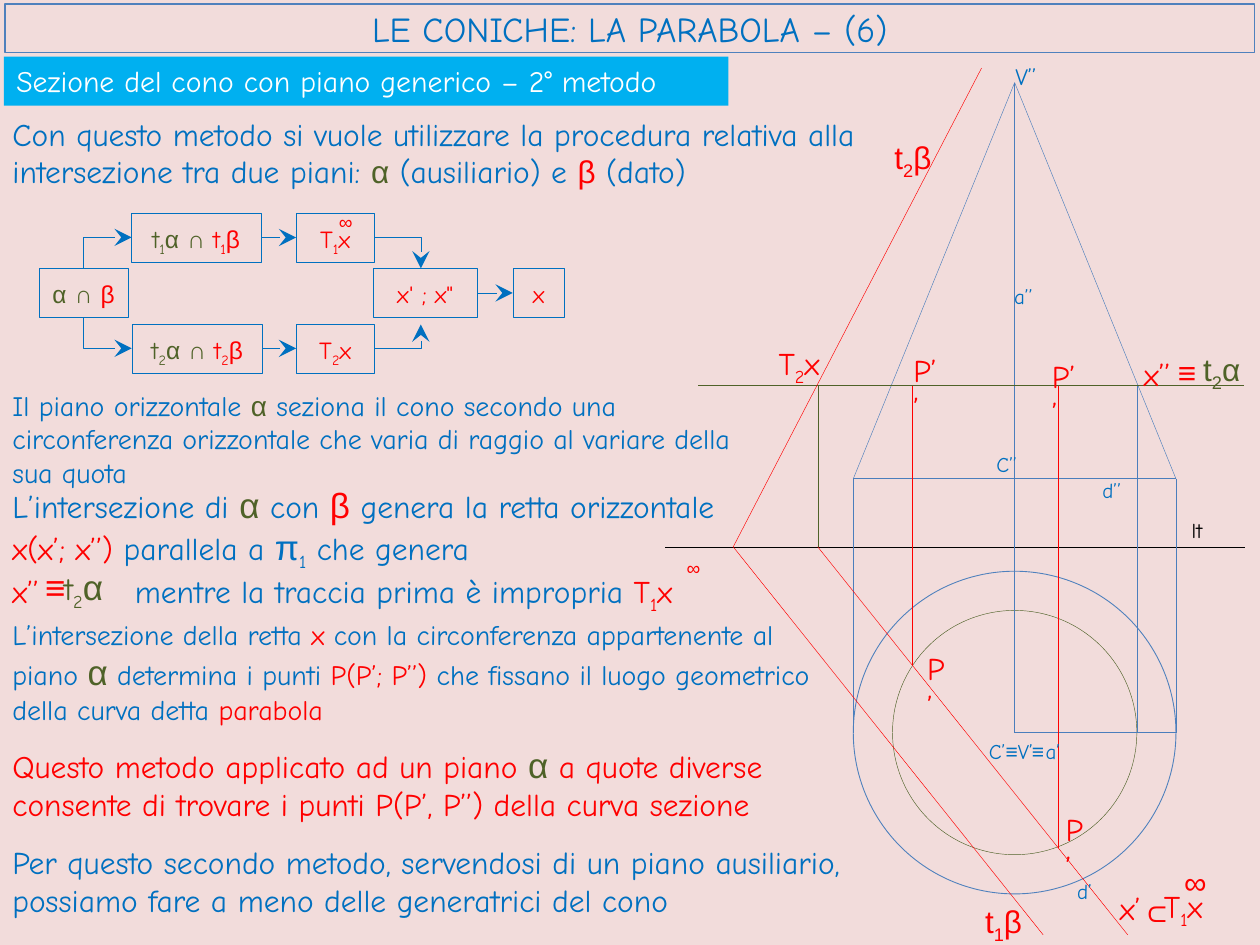
from itertools import groupby
from lxml import etree
from pptx import Presentation
from pptx.dml.color import RGBColor
from pptx.enum import shapes, text
from pptx.oxml import ns
from pptx.util import Pt

BLUE = RGBColor(0x00, 0x70, 0xC0)
STEEL = RGBColor(0x4B, 0x7E, 0xBC)
EDGE = RGBColor(0x4F, 0x81, 0xBD)
CYAN = RGBColor(0x00, 0xB0, 0xF0)
RED = RGBColor(0xFF, 0x00, 0x00)
GREEN = RGBColor(0x4F, 0x62, 0x28)
BLACK = RGBColor(0x00, 0x00, 0x00)
WHITE = RGBColor(0xFF, 0xFF, 0xFF)
PINK = RGBColor(0xF2, 0xDC, 0xDB)
HAND, SANS = "Comic Neue", "Arial"
SUBS = {"₁": "1", "₂": "2"}
SIGNS = "αβπ∞≡∩⊂"

# Content: a paragraph is a list of (colour, text); ₁ and ₂ become subscripts
TITLE = "LE CONICHE: LA PARABOLA – (6)"
BANNER = "Sezione del cono con piano generico – 2° metodo"

# top, width, height, size, sign size, paragraphs
NOTES = [
    (61.9, 533.5, 51, 18, 18, [[
        (BLUE, "Con questo metodo si vuole utilizzare la procedura relativa alla "
               "intersezione tra due piani: "),
        (GREEN, "α"), (BLUE, " (ausiliario) e "), (RED, "β"), (BLUE, " (dato)")]]),
    (218.2, 445, 65.5, 16, 16, [[
        (BLUE, "Il piano orizzontale "), (GREEN, "α"),
        (BLUE, " seziona il cono secondo una circonferenza orizzontale che varia "
               "di raggio al variare della sua quota")]]),
    (272.9, 447.8, 80, 18, 20, [
        [(BLUE, "L’intersezione di "), (GREEN, "α"), (BLUE, " con "), (RED, "β"),
         (BLUE, " genera la retta orizzontale "), (RED, "x(x’; x’’) "),
         (BLUE, "parallela a π₁ che genera")],
        [(RED, "x’’"), (BLUE, "\tmentre la traccia prima è impropria "),
         (RED, "T₁x")]]),
    (349.2, 476, 70.5, 16, 20, [[
        (BLUE, "L’intersezione della retta "), (RED, "x"),
        (BLUE, " con la circonferenza appartenente al piano "), (GREEN, "α"),
        (BLUE, " determina i punti "), (RED, "P(P’; P’’) "),
        (BLUE, "che fissano il luogo geometrico della curva detta "),
        (RED, "parabola")]]),
    (421.2, 513.4, 53.3, 18, 20, [[
        (RED, "Questo metodo applicato ad un piano "), (GREEN, "α"),
        (RED, " a quote diverse consente di trovare i punti P(P’, P’’) "
              "della curva sezione")]]),
    (478, 506.9, 51, 18, 18, [[
        (BLUE, "Per questo secondo metodo, servendosi di un piano ausiliario, "
               "possiamo fare a meno delle generatrici del cono")]]),
]

# name: left, row, width, runs
STEPS = {
    "start": (22.3, 1, 51, [(GREEN, "α ∩ "), (RED, "β")]),
    "first": (75, 0, 74.2, [(GREEN, "t₁α ∩ "), (RED, "t₁β")]),
    "second": (75.6, 2, 74.2, [(GREEN, "t₂α ∩ "), (RED, "t₂β")]),
    "T1": (169.2, 0, 44.6, [(RED, "T₁x")]),
    "T2": (169.2, 2, 44.6, [(RED, "T₂x")]),
    "views": (213.1, 1, 59.8, [(RED, "x' ; x\"")]),
    "end": (293, 1, 29.5, [(RED, "x")]),
}
LINKS = [("first", "T1"), ("second", "T2"), ("views", "end")]

# text, colour, left, top, width, size, font
LABELS = [
    ("C’’", BLUE, 562.3, 254.2, 37.4, 12, HAND),
    ("C’≡V’", BLUE, 558, 418.3, 42.5, 12, HAND),
    ("≡", BLUE, 582.5, 418.3, 22.3, 12, SANS),
    ("a’", BLUE, 590.4, 418.3, 27.4, 12, HAND),
    ("V’’", BLUE, 573.1, 31.7, 37.4, 13.5, HAND),
    ("lt", BLACK, 673.9, 292.3, 27.4, 12, HAND),
    ("d’’", BLUE, 622.8, 269.3, 27.4, 12, HAND),
    ("d’", BLUE, 608.4, 498.2, 25.9, 12, HAND),
    ("a’’", BLUE, 572.4, 158.4, 27.4, 12, HAND),
    ("t₂β", RED, 504, 75.6, 39.6, 18, SANS),
    ("t₁β", RED, 555.8, 511.9, 39.6, 18, SANS),
    ("t₂α", GREEN, 680.4, 196.6, 39.6, 18, SANS),
    ("T₂x", RED, 437.8, 193, 45.4, 18, HAND),
    ("x’’", RED, 646.6, 199.4, 33.8, 18, HAND),
    ("≡", RED, 666, 198, 22.3, 18, SANS),
    ("x’", RED, 632.9, 504.7, 28, 18, HAND),
    ("⊂", RED, 645.1, 505.4, 22, 18, SANS),
    ("T₁x", RED, 658, 503.3, 43.2, 18, HAND),
    ("∞", RED, 669.6, 489.6, 28, 18, SANS),
    ("P’", RED, 522.7, 367.2, 27.4, 18, HAND),
    ("P’’", RED, 514.8, 197.3, 30.2, 18, HAND),
    ("P’", RED, 601.9, 459.4, 27.4, 18, HAND),
    ("P’’", RED, 594, 200.2, 30.2, 18, HAND),
    ("∞", RED, 186.5, 116.6, 24, 11, SANS),
    ("∞", RED, 385.2, 314.6, 24, 11, SANS),
    ("≡", RED, 18.7, 319.7, 26, 20, SANS),
    ("t₂α", GREEN, 29.6, 319.7, 43, 18, HAND),
]

deck = Presentation()
deck.slide_width, deck.slide_height = Pt(720), Pt(540)
slide = deck.slides.add_slide(deck.slide_layouts[5])
slide.background.fill.solid()
slide.background.fill.fore_color.rgb = PINK
parts = slide.shapes


def kind(char):
    return "sub" if char in SUBS else "sign" if char in SIGNS else "text"


def write(shape, paras, size=18, sign=None, font=HAND, align=text.PP_ALIGN.LEFT,
          anchor=text.MSO_ANCHOR.TOP, space=None, tab=None):
    frame = shape.text_frame
    frame.word_wrap = True
    frame.auto_size = text.MSO_AUTO_SIZE.NONE
    frame.vertical_anchor = anchor
    for i, runs in enumerate(paras):
        para = frame.add_paragraph() if i else frame.paragraphs[0]
        para.alignment = align
        if space:
            para.line_spacing = space
        if tab and any("\t" in words for _, words in runs):
            stops = etree.SubElement(para._p.get_or_add_pPr(), ns.qn("a:tabLst"))
            etree.SubElement(stops, ns.qn("a:tab"), pos=str(Pt(tab)), algn="l")
        for tint, words in runs:
            for sort, chars in groupby(words, kind):
                run = para.add_run()
                run.text = "".join(SUBS.get(c, c) for c in chars)
                run.font.size = Pt(sign if sign and sort == "sign" else size)
                run.font.name = SANS if sort == "sign" else font
                run.font.color.rgb = tint
                if sort == "sub":
                    run._r.get_or_add_rPr().set("baseline", "-25000")


def place(shape, x, y, w, h):
    shape.left, shape.top, shape.width, shape.height = Pt(x), Pt(y), Pt(w), Pt(h)


def box(x, y, w, h, edge=None, fill=None, width=0.25, form="RECTANGLE"):
    shape = parts.add_shape(shapes.MSO_SHAPE[form], Pt(x), Pt(y), Pt(w), Pt(h))
    shape.shadow.inherit = False
    for part, tint in ((shape.fill, fill), (shape.line.fill, edge)):
        if tint is None:
            part.background()
        else:
            part.solid()
            part.fore_color.rgb = tint
    if edge is not None:
        shape.line.width = Pt(width)
    return shape


def line(x1, y1, x2, y2, tint, width=0.25, bend=None, arrow=False):
    form = shapes.MSO_CONNECTOR.STRAIGHT if bend is None else shapes.MSO_CONNECTOR.ELBOW
    wire = parts.add_connector(form, Pt(x1), Pt(y1), Pt(x2), Pt(y2))
    wire.line.color.rgb = tint
    wire.line.width = Pt(width)
    props = wire._element.spPr
    if bend is not None:
        guides = props.find(ns.qn("a:prstGeom")).get_or_add_avLst()
        etree.SubElement(guides, ns.qn("a:gd"), name="adj1", fmla=f"val {bend}")
    if arrow:
        etree.SubElement(wire.line._get_or_add_ln(), ns.qn("a:tailEnd"),
                         type="stealth", w="lg", len="lg")
    etree.SubElement(props, ns.qn("a:effectLst"))
    return wire


# Title and banner
head = parts.title
place(head, 2.9, 2.2, 714.2, 28)
head.line.color.rgb = EDGE
head.line.width = Pt(0.75)
write(head, [[(BLUE, TITLE)]], size=20, align=text.PP_ALIGN.CENTER,
      anchor=text.MSO_ANCHOR.MIDDLE)
write(box(2.2, 32.4, 414, 28, fill=CYAN), [[(WHITE, BANNER)]], size=17)

# Cone: circles, outline and axis
CX, CY, BIG, SMALL = 579.8, 418.6, 92.2, 69.8
APEX, BASE, CUT, LAND = 47.2, 273.6, 220.4, 312.5
line(380.2, LAND, 711.4, LAND, BLACK)
for r, tint, width in ((BIG, EDGE, 0.5), (SMALL, GREEN, 0.25)):
    box(CX - r, CY - r, 2 * r, 2 * r, tint, width=width, form="OVAL")
for x in (CX - BIG, CX + BIG):
    line(x, CY, x, BASE, STEEL)
    line(CX, APEX, x, BASE, STEEL)
line(CX - BIG, BASE, CX + BIG, BASE, STEEL, 0.5)
line(CX, CY, CX + BIG, CY, STEEL)
line(CX, APEX, CX, CY, STEEL)

# Cutting planes and the points of the section
BETA, TRACE, RUN, FOOT = 419, 467.3, 177.1, 534.2
line(398.9, CUT, 710.6, CUT, GREEN)
line(CX + SMALL, CY, CX + SMALL, CUT, STEEL)
line(TRACE, CUT, TRACE, LAND, GREEN)
line(BETA, LAND, 560.9, 38.9, RED)
for x in (BETA, TRACE):
    line(x, LAND, x + RUN, FOOT, RED)
for x in (521.3, 604.8):
    line(x, CUT, x, LAND + (x - TRACE) * (FOOT - LAND) / RUN, RED)

# Flow chart
TOP, STEP, TALL = 121.7, 31.7, 28
nodes = {}
for name, (x, row, w, runs) in STEPS.items():
    nodes[name] = box(x, TOP + row * STEP, w, TALL, BLUE)
    write(nodes[name], [runs], size=14, align=text.PP_ALIGN.CENTER, space=1.15)
for one, two in LINKS:
    wire = line(0, 0, 9, 9, BLUE, arrow=True)
    wire.begin_connect(nodes[one], 3)
    wire.end_connect(nodes[two], 1)
for row, side in ((0, TOP + STEP), (2, TOP + STEP + TALL)):
    mid = TOP + row * STEP + TALL / 2
    line(47.8, side, 75.3, mid, BLUE, bend=0, arrow=True)
    gap = 4 * (row - 1)
    line(214.2, mid, 240.5, side + max(gap, 0), BLUE, bend=100000, arrow=True)

# Paragraphs and labels
for y, w, h, size, sign, paras in NOTES:
    note = parts.add_textbox(0, Pt(y), Pt(w), Pt(h))
    write(note, paras, size=size, sign=sign, tab=70)
for words, tint, x, y, w, size, font in LABELS:
    tag = parts.add_textbox(Pt(x), Pt(y), Pt(w), Pt(size * 1.6))
    write(tag, [[(tint, words)]], size=size, sign=20 if words == "t₂α" and font == HAND else None,
          font=font)

deck.save("out.pptx")
